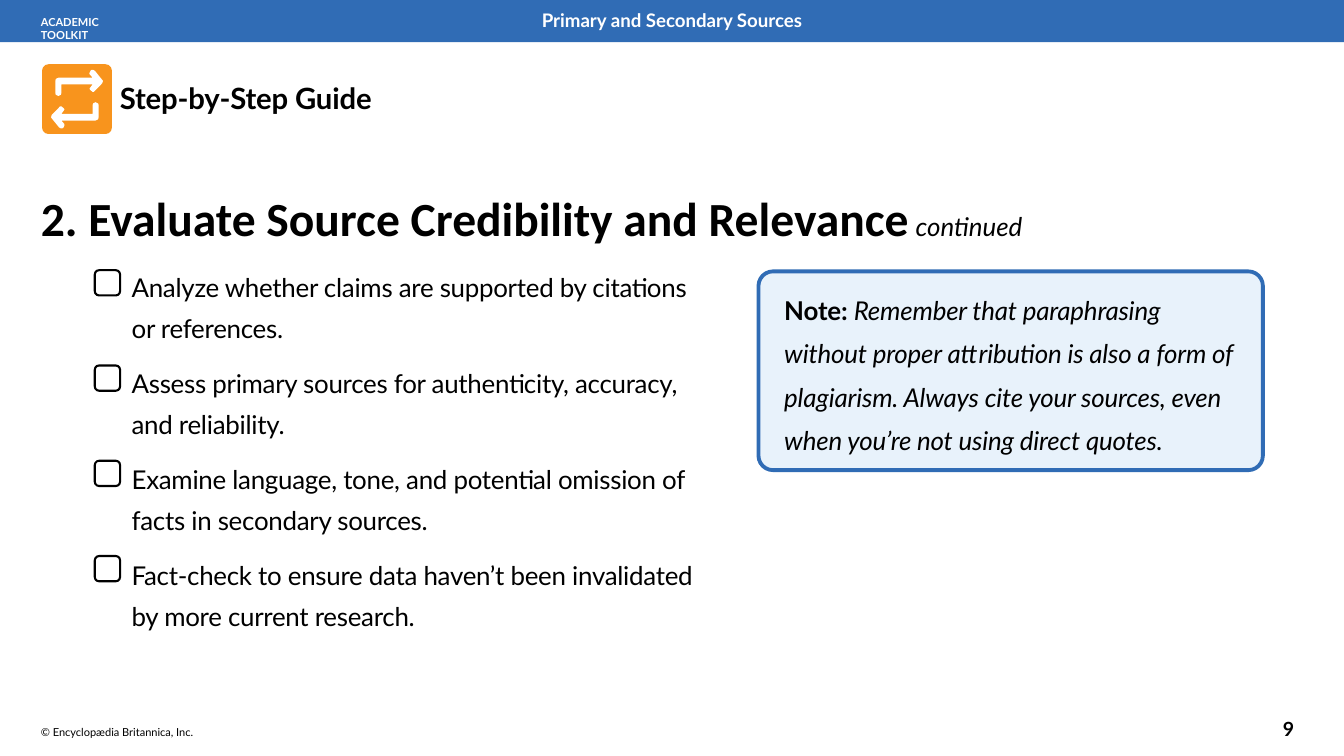
from pptx import Presentation
from pptx.dml.color import RGBColor
from pptx.enum.shapes import MSO_SHAPE as Shape
from pptx.enum.text import PP_ALIGN as Align
from pptx.util import Cm, Pt

BLUE, PALE_BLUE, ORANGE, BLACK, WHITE = "306CB5", "E8F2FB", "F8941D", "000000", "FFFFFF"
MARGIN = 1.7

BODY = {"name": "Lato", "size": Pt(30.5), "bold": False, "italic": False}
BODY_ITALIC = BODY | {"italic": True}
BODY_BOLD = BODY | {"bold": True}
TITLE = {"name": "Calibri", "size": Pt(56), "bold": True}
GUIDE = {"name": "Lato", "size": Pt(34.5), "bold": True}
TOPIC = {"name": "Lato", "size": Pt(22), "bold": True}
SMALL = {"name": "Lato", "size": Pt(13), "bold": False}
SMALL_BOLD = SMALL | {"bold": True}
PAGE_NUMBER = {"name": "Lato", "size": Pt(23), "bold": True}

CHECKS = [
    "Analyze whether claims are supported by citations or references.",
    "Assess primary sources for authenticity, accuracy, and reliability.",
    "Examine language, tone, and potential omission of facts in secondary sources.",
    "Fact-check to ensure data haven’t been invalidated by more current research.",
]

ARROW = [
    (108, -76), (75, -117), (67, -122), (62, -122), (57, -119), (52, -109),
    (52, -104), (65, -89), (-77, -89), (-88, -84), (-90, -74), (-90, -25),
    (-88, -18), (-77, -13), (-67, -18), (-65, -25), (-65, -61), (65, -61),
    (55, -48), (52, -43), (55, -38), (65, -30), (70, -30), (105, -66),
]


def rgb(value):
    """Return the colour for a hex string."""
    return RGBColor.from_string(value)


def paint(shape, fill=None, line=None, width=0):
    """Set the fill and line of a shape and take away its shadow."""
    shape.shadow.inherit = False
    if fill:
        shape.fill.solid()
        shape.fill.fore_color.rgb = rgb(fill)
    else:
        shape.fill.background()
    if line:
        shape.line.color.rgb = rgb(line)
        shape.line.width = Pt(width)
    else:
        shape.line.fill.background()


def add_panel(shapes, kind, box, corner=None, **colours):
    """Add a painted preset shape in a box given in centimetres."""
    panel = shapes.add_shape(kind, *map(Cm, box))
    if corner is not None:
        panel.adjustments[0] = corner
    paint(panel, **colours)
    return panel


def add_text(shapes, box, paragraphs, colour=BLACK, spacing=0, **layout):
    """Add paragraphs, each a list of (wording, format) runs, in a box."""
    frame = shapes.add_textbox(*map(Cm, box)).text_frame
    frame.word_wrap = True
    frame.margin_left = frame.margin_right = frame.margin_bottom = 0
    frame.margin_top = Cm(0.04)
    for index, runs in enumerate(paragraphs):
        paragraph = frame.paragraphs[0] if index == 0 else frame.add_paragraph()
        for attribute, value in layout.items():
            if index or attribute != "space_before":
                setattr(paragraph, attribute, value)
        for wording, style in runs:
            run = paragraph.add_run()
            run.text = wording
            for attribute, value in style.items():
                setattr(run.font, attribute, value)
            run.font.color.rgb = rgb(colour)
            run._r.get_or_add_rPr().set("spc", str(spacing))


def add_header(shapes, box):
    """Add the blue bar with the toolkit name and the topic."""
    left, top, width, height = box
    add_panel(shapes, Shape.RECTANGLE, box, fill=BLUE)
    add_text(shapes, (left + MARGIN, top + 0.61, 4.14, 0.64),
             [[("ACADEMIC TOOLKIT", SMALL_BOLD)]], WHITE)
    topic_width = 13.34
    add_text(shapes, (left + (width - topic_width) / 2, top + 0.33, topic_width, 1),
             [[("Primary and Secondary Sources", TOPIC)]], WHITE, alignment=Align.CENTER)


def add_guide_label(shapes, box):
    """Add the icon of two turning arrows and the guide label beside it."""
    left, top, width, height = box
    icon = shapes.add_group_shape().shapes
    side = 2.9
    add_panel(icon, Shape.ROUNDED_RECTANGLE, (left, top, side, side), 0.09, fill=ORANGE)
    turned = [(-x, -y) for x, y in ARROW]
    outline = icon.build_freeform(*ARROW[0], scale=Cm(0.01))
    outline.add_line_segments(ARROW[1:])
    outline.move_to(*turned[0])
    outline.add_line_segments(turned[1:])
    paint(outline.convert_to_shape(Cm(left + side / 2), Cm(top + side / 2)), fill=WHITE)
    label_left = side + 0.33
    add_text(shapes, (left + label_left, top + 0.63, width - label_left, 1.55),
             [[("Step-by-Step Guide", GUIDE)]], spacing=-17)


def add_title(shapes, box):
    """Add the step title with its continuation mark."""
    add_text(shapes, box, [[("2. Evaluate Source Credibility and Relevance", TITLE),
                            (" continued", BODY_ITALIC)]])


def add_checklist(shapes, box):
    """Add the checks with an empty tick box before each."""
    left, top, width, height = box
    text_indent, tick_left, tick_top, tick_side, pitch = 3.77, 2.24, 0.36, 1.05, 3.96
    add_text(shapes, (left + text_indent, top, width - text_indent, height),
             [[(check, BODY)] for check in CHECKS],
             spacing=-30, line_spacing=1.3, space_before=Pt(18))
    for row in range(len(CHECKS)):
        add_panel(shapes, Shape.ROUNDED_RECTANGLE,
                  (left + tick_left, top + tick_top + row * pitch, tick_side, tick_side),
                  0.17, line=BLACK, width=2.47)


def add_note(shapes, box):
    """Add the framed note on paraphrasing."""
    left, top, width, height = box
    add_panel(shapes, Shape.ROUNDED_RECTANGLE, box, 0.073,
              fill=PALE_BLUE, line=BLUE, width=4.5)
    add_text(shapes, (left + 1.07, top + 0.41, width - 2, height - 1.17),
             [[("Note: ", BODY_BOLD),
               ("Remember that paraphrasing without proper attribution is also a form of "
                "plagiarism. Always cite your sources, even when you’re not using direct "
                "quotes.", BODY_ITALIC)]], spacing=-20, line_spacing=1.4)


def add_footer(shapes, box):
    """Add the copyright line and the page number."""
    left, top, width, height = box
    add_text(shapes, (left, top + 0.36, 6.53, 0.64),
             [[("© Encyclopædia Britannica, Inc.", SMALL)]])
    add_text(shapes, (left + width - 0.94, top, 0.94, height), [[("9", PAGE_NUMBER)]])


def main():
    """Build the slide and save it."""
    deck = Presentation()
    deck.slide_width, deck.slide_height = Cm(55.85), Cm(31.42)
    shapes = deck.slides.add_slide(deck.slide_layouts[6]).shapes
    add_header(shapes, (0, 0, 55.85, 1.75))
    add_guide_label(shapes, (1.75, 2.67, 13.95, 2.9))
    add_title(shapes, (MARGIN, 7.82, 53.31, 2.44))
    add_checklist(shapes, (MARGIN, 10.87, 27.48, 15.32))
    add_note(shapes, (31.52, 11.28, 20.96, 8.26))
    add_footer(shapes, (MARGIN, 29.77, 52.55, 1.04))
    deck.save("out.pptx")


if __name__ == "__main__":
    main()
